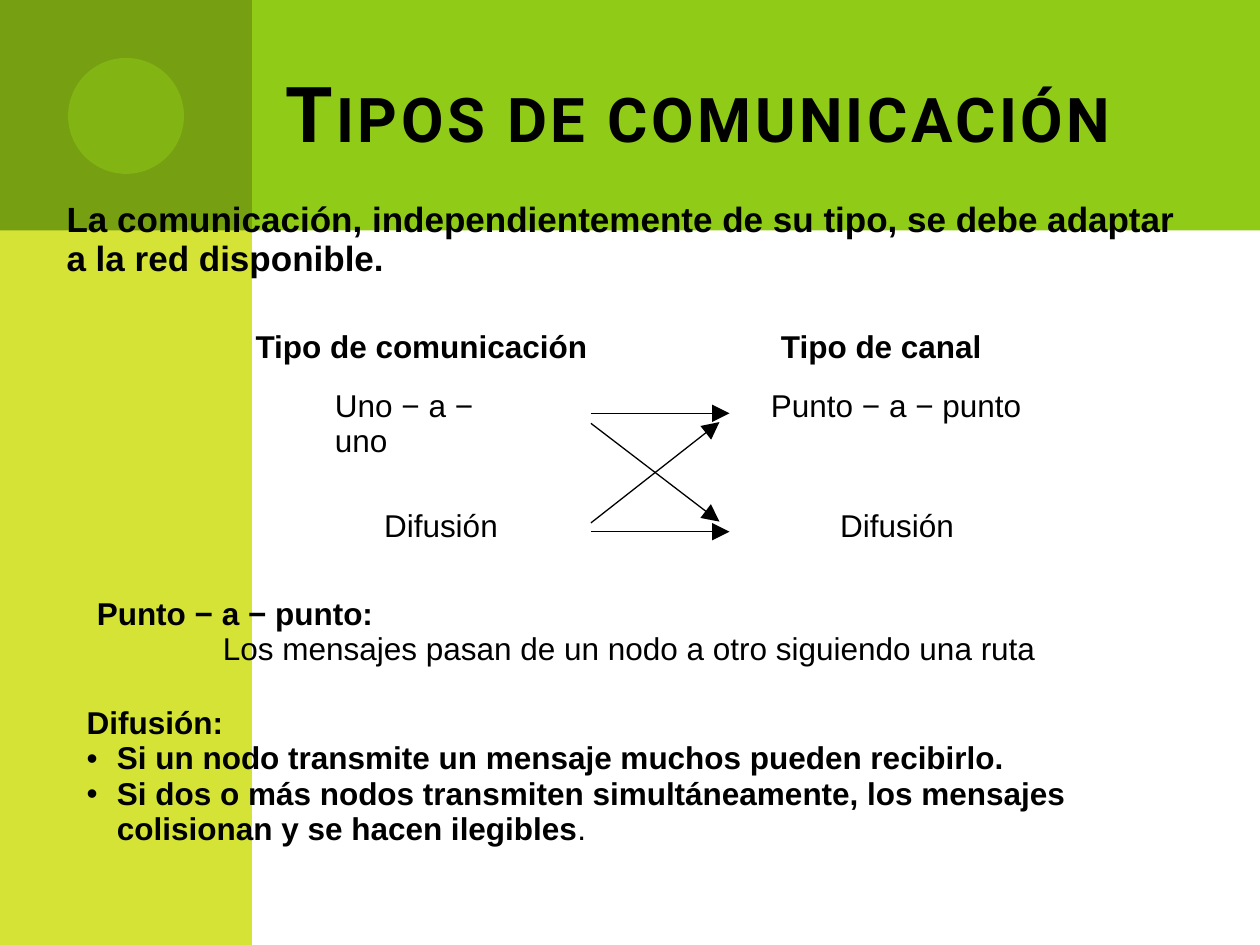
from dataclasses import dataclass

from lxml import etree
from pptx import Presentation
from pptx.dml.color import RGBColor
from pptx.enum import shapes, text
from pptx.oxml.ns import qn
from pptx.util import Inches, Pt

BLACK = "000000"


@dataclass
class Panel:
    kind: shapes.MSO_SHAPE
    box: tuple[float, float, float, float]
    color: str
    opacity: int = 100


@dataclass
class Para:
    runs: list[tuple[str, bool]]  # wording, bold
    margin: float = 0
    bullet: bool = False
    spacing: float = 0.93


@dataclass
class Block:
    box: tuple[float, float, float, float]
    paras: list[Para]
    size: int = 18
    wrap: bool = False


@dataclass
class Arrow:
    start: tuple[float, float]
    end: tuple[float, float]


def rgb(color: str) -> RGBColor:
    return RGBColor.from_string(color)


def add_panel(slide, panel: Panel) -> None:
    shape = slide.shapes.add_shape(panel.kind, *map(Inches, panel.box))
    shape.shadow.inherit = False
    shape.line.fill.background()
    shape.fill.solid()
    shape.fill.fore_color.rgb = rgb(panel.color)
    if panel.opacity < 100:
        color = shape.fill._xPr.find(".//" + qn("a:srgbClr"))
        etree.SubElement(color, qn("a:alpha"), val=str(panel.opacity * 1000))


def add_run(paragraph, wording: str, size: int, bold: bool, face: str = "Arial"):
    run = paragraph.add_run()
    run.text = wording
    for name, value in {"name": face, "size": Pt(size), "bold": bold}.items():
        setattr(run.font, name, value)
    run.font.color.rgb = rgb(BLACK)
    return run


def add_title(slide, wording: str) -> None:
    frame = slide.shapes.add_textbox(*map(Inches, (0.5, 0.3, 9, 1.25))).text_frame
    frame.word_wrap = True
    frame.vertical_anchor = text.MSO_ANCHOR.MIDDLE
    paragraph = frame.paragraphs[0]
    paragraph.alignment = text.PP_ALIGN.RIGHT
    paragraph.line_spacing = 0.93
    properties = add_run(paragraph, wording, 44, True, "Roboto").font._element
    properties.set("cap", "small")
    properties.set("spc", "200")


def indent(paragraph, para: Para) -> None:
    """Set the left margin and, for a list item, the hanging bullet."""
    properties = paragraph._p.get_or_add_pPr()
    properties.set("marL", str(Inches(para.margin)))
    properties.set("indent", str(-Inches(para.margin) if para.bullet else 0))
    if para.bullet:
        color = etree.SubElement(properties, qn("a:buClr"))
        etree.SubElement(color, qn("a:srgbClr"), val=BLACK)
        etree.SubElement(properties, qn("a:buFont"), typeface="Arial")
        etree.SubElement(properties, qn("a:buChar"), char="•")


def add_block(slide, block: Block) -> None:
    frame = slide.shapes.add_textbox(*map(Inches, block.box)).text_frame
    frame.word_wrap = block.wrap
    for number, para in enumerate(block.paras):
        paragraph = frame.add_paragraph() if number else frame.paragraphs[0]
        paragraph.line_spacing = para.spacing
        indent(paragraph, para)
        for wording, bold in para.runs:
            add_run(paragraph, wording, block.size, bold)


def add_arrow(slide, arrow: Arrow) -> None:
    ends = map(Inches, arrow.start + arrow.end)
    connector = slide.shapes.add_connector(shapes.MSO_CONNECTOR.STRAIGHT, *ends)
    connector.line.color.rgb = rgb(BLACK)
    connector.line.width = Pt(0.75)
    etree.SubElement(connector.line._get_or_add_ln(), qn("a:tailEnd"),
                     type="triangle", w="lg", len="lg")
    etree.SubElement(connector._element.spPr, qn("a:effectLst"))


def label(left: float, top: float, width: float, wording: str, bold: bool = False) -> Block:
    return Block((left, top, width, 0.4), [Para([(wording, bold)])])


RECT, OVAL = shapes.MSO_SHAPE.RECTANGLE, shapes.MSO_SHAPE.OVAL
PANELS = [
    Panel(RECT, (0.5, 0, 9.5, 1.83), "8FCB17"),
    Panel(RECT, (0, 0, 2, 7.5), "D4E336"),
    Panel(RECT, (0, 0, 2, 1.83), "769F11"),
    Panel(OVAL, (0.54, 0.46, 0.92, 0.92), "8FCB17", opacity=50),
]
HEADING_TOP, ONE_TO_ONE_TOP, BROADCAST_TOP = 2.57, 3.04, 3.99
BLOCKS = [
    Block((0.43, 1.55, 9.21, 0.77), [Para([(
        "La comunicación, independientemente de su tipo, "
        "se debe adaptar a la red disponible.", True)])], size=20, wrap=True),
    label(1.93, HEADING_TOP, 2.84, "Tipo de comunicación", bold=True),
    label(6.1, HEADING_TOP, 1.8, "Tipo de canal", bold=True),
    label(2.56, ONE_TO_ONE_TOP, 1.78, "Uno − a − uno"),
    label(6.02, ONE_TO_ONE_TOP, 2.19, "Punto − a − punto"),
    label(2.95, BROADCAST_TOP, 1.1, "Difusión"),
    label(6.57, BROADCAST_TOP, 1.1, "Difusión"),
    Block((0.67, 4.69, 7.65, 0.7), [
        Para([("Punto − a − punto:", True)]),
        Para([("Los mensajes pasan de un nodo a otro siguiendo una ruta", False)], margin=1),
    ]),
    Block((0.59, 5.56, 9.16, 1.3), [
        Para([("Difusión:", True)]),
        Para([("Si un nodo transmite un mensaje muchos pueden recibirlo.", True)],
             margin=0.24, bullet=True),
        Para([("Si dos o más nodos transmiten simultáneamente, los mensajes "
               "colisionan y se hacen ilegibles", True), (".", False)],
             margin=0.24, bullet=True),
    ], wrap=True),
]
ARROW_LEFT = 4.69
ARROWS = [
    Arrow((ARROW_LEFT, 3.28), (5.79, 3.28)),
    Arrow((ARROW_LEFT, 4.22), (5.79, 4.22)),
    Arrow((ARROW_LEFT, 4.15), (5.71, 3.35)),
    Arrow((ARROW_LEFT, 3.36), (5.71, 4.14)),
]


def main() -> None:
    deck = Presentation()
    deck.slide_width, deck.slide_height = Inches(10), Inches(7.5)
    slide = deck.slides.add_slide(deck.slide_layouts[6])
    for panel in PANELS:
        add_panel(slide, panel)
    add_title(slide, "Tipos de comunicación")
    for block in BLOCKS:
        add_block(slide, block)
    for arrow in ARROWS:
        add_arrow(slide, arrow)
    deck.save("out.pptx")


if __name__ == "__main__":
    main()
